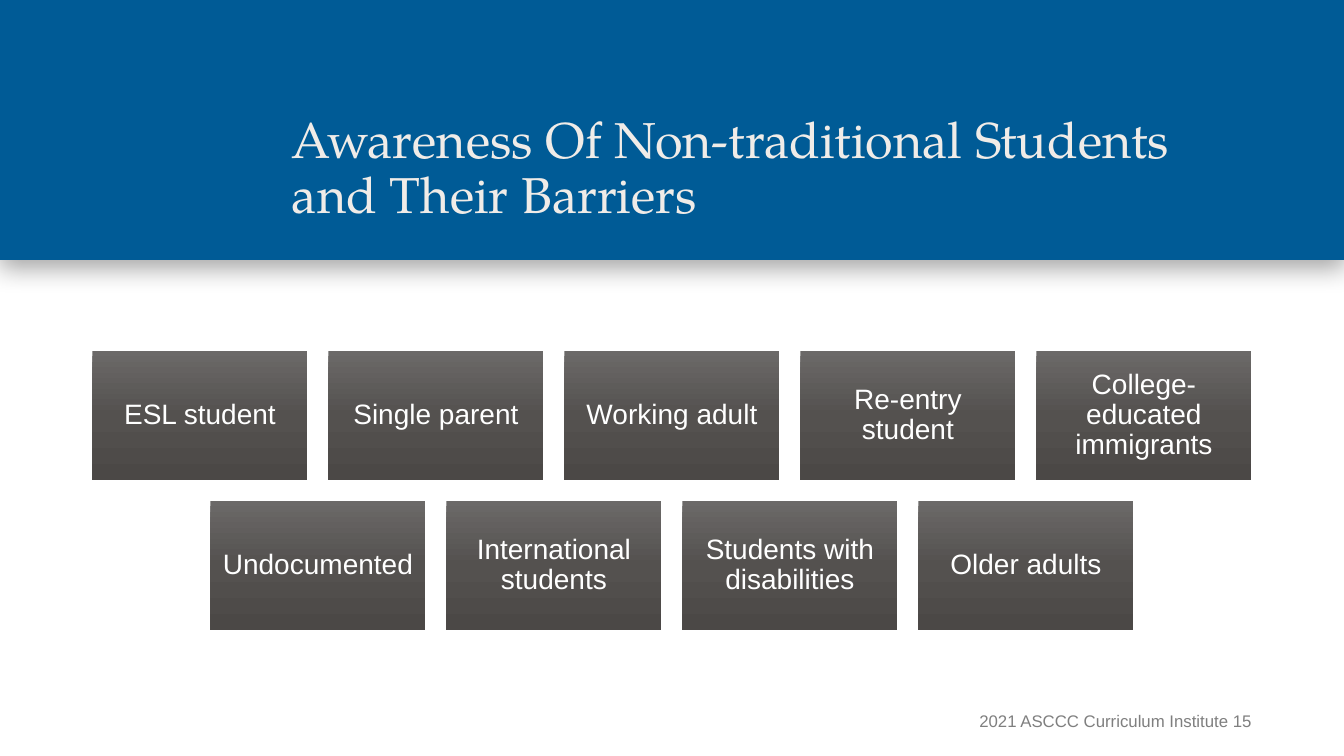
from copy import deepcopy

from lxml.etree import SubElement
from pptx import Presentation
from pptx.dml.color import RGBColor
from pptx.enum.shapes import MSO_SHAPE
from pptx.enum.text import MSO_ANCHOR, MSO_AUTO_SIZE, PP_ALIGN
from pptx.oxml.ns import qn
from pptx.util import Pt

# Content
TITLE = "Awareness Of Non-traditional Students and Their Barriers"
ROWS = [
    ["ESL student", "Single parent", "Working adult", "Re-entry student",
     "College-educated immigrants"],
    ["Undocumented", "International students", "Students with disabilities",
     "Older adults"],
]
FOOTER = "2021 ASCCC Curriculum Institute 15"

# Colours
BLUE = RGBColor(0x00, 0x5B, 0x96)
CREAM = RGBColor(0xF0, 0xEC, 0xE8)
WHITE = RGBColor(0xFF, 0xFF, 0xFF)
GREY = RGBColor(0x7F, 0x7F, 0x7F)
SHADES = [
    (0, RGBColor(0x6B, 0x69, 0x68)),
    (0.5, RGBColor(0x54, 0x51, 0x4F)),
    (1, RGBColor(0x4B, 0x48, 0x46)),
]

# Lengths in px
WIDE, HIGH = 1344, 756
CARD_W, CARD_H = 215, 129
GAP_X, GAP_Y = 21, 21
TOP = 351


def px(n):
    return round(n * 914400 / 100.8)


def box(*sizes):
    return [px(n) for n in sizes]


def style(shape, text, font, size, color, align, anchor, pads, lead=1.0):
    frame = shape.text_frame
    frame.text = text
    frame.word_wrap = True
    frame.auto_size = MSO_AUTO_SIZE.NONE
    frame.vertical_anchor = anchor
    (frame.margin_left, frame.margin_top,
     frame.margin_right, frame.margin_bottom) = box(*pads)
    para = frame.paragraphs[0]
    para.alignment = align
    para.line_spacing = lead
    face = para.runs[0].font
    face.name, face.size = font, Pt(size)
    face.color.rgb = color


def add_rect(slide, *place):
    shape = slide.shapes.add_shape(MSO_SHAPE.RECTANGLE, *box(*place))
    shape.shadow.inherit = False
    shape.line.fill.background()
    return shape


def drop_shadow(shape):
    effects = shape._element.spPr.find(qn("a:effectLst"))
    outer = SubElement(effects, qn("a:outerShdw"), blurRad=str(Pt(18)),
                       dist=str(Pt(5)), dir="5400000", rotWithShape="0")
    tint = SubElement(outer, qn("a:srgbClr"), val="000000")
    SubElement(tint, qn("a:alpha"), val="35000")


def shade(shape):
    fill = shape.fill
    fill.gradient()
    fill.gradient_angle = 270
    stops = shape._element.spPr.find(".//" + qn("a:gsLst"))
    stops.append(deepcopy(stops[0]))
    for stop, (place, color) in zip(fill.gradient_stops, SHADES):
        stop.position = place
        stop.color.rgb = color


def main():
    deck = Presentation()
    deck.slide_width, deck.slide_height = box(WIDE, HIGH)
    slide = deck.slides.add_slide(deck.slide_layouts[5])

    # Blue band, with the title brought in front of it
    band = add_rect(slide, 0, 0, WIDE, 260)
    band.fill.solid()
    band.fill.fore_color.rgb = BLUE
    drop_shadow(band)
    title = slide.shapes.title
    band._element.addnext(title._element)
    title.left, title.top, title.width, title.height = box(282, 44, 970, 185)
    style(title, TITLE, "TeX Gyre Pagella", 36, CREAM, PP_ALIGN.LEFT,
          MSO_ANCHOR.BOTTOM, (10, 5, 10, 5), 0.9)

    # Cards, each row centred
    for i, row in enumerate(ROWS):
        span = len(row) * (CARD_W + GAP_X) - GAP_X
        left = (WIDE - span) / 2
        for j, name in enumerate(row):
            card = add_rect(slide, left + j * (CARD_W + GAP_X),
                            TOP + i * (CARD_H + GAP_Y), CARD_W, CARD_H)
            shade(card)
            style(card, name, "Arial", 20, WHITE, PP_ALIGN.CENTER,
                  MSO_ANCHOR.MIDDLE, (8, 8, 8, 8), 0.9)

    # Footer
    foot = slide.shapes.add_textbox(*box(963, 701, 289, 40))
    style(foot, FOOTER, "Arial", 12, GREY, PP_ALIGN.RIGHT,
          MSO_ANCHOR.MIDDLE, (10, 5, 0, 5))

    deck.save("out.pptx")


if __name__ == "__main__":
    main()
